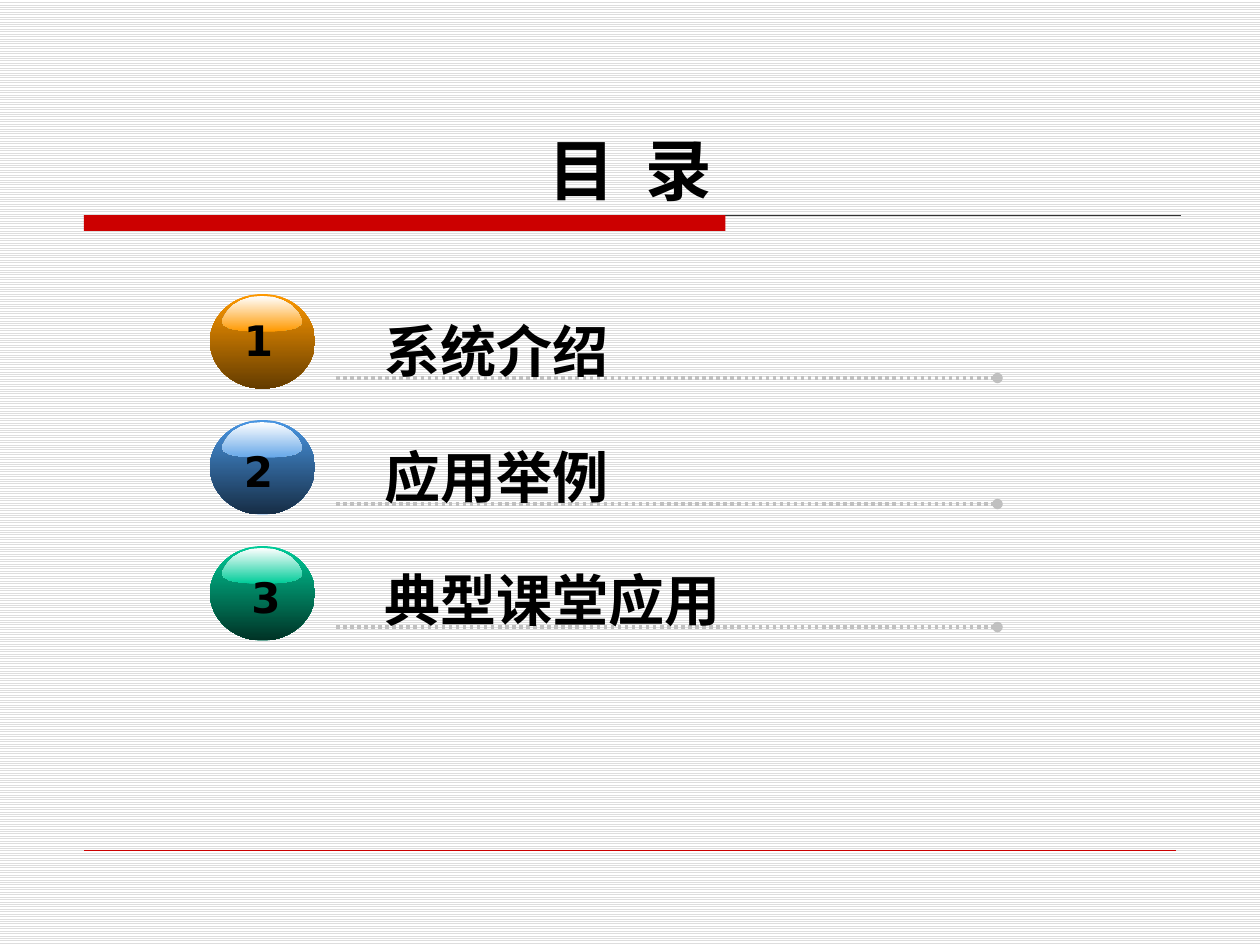
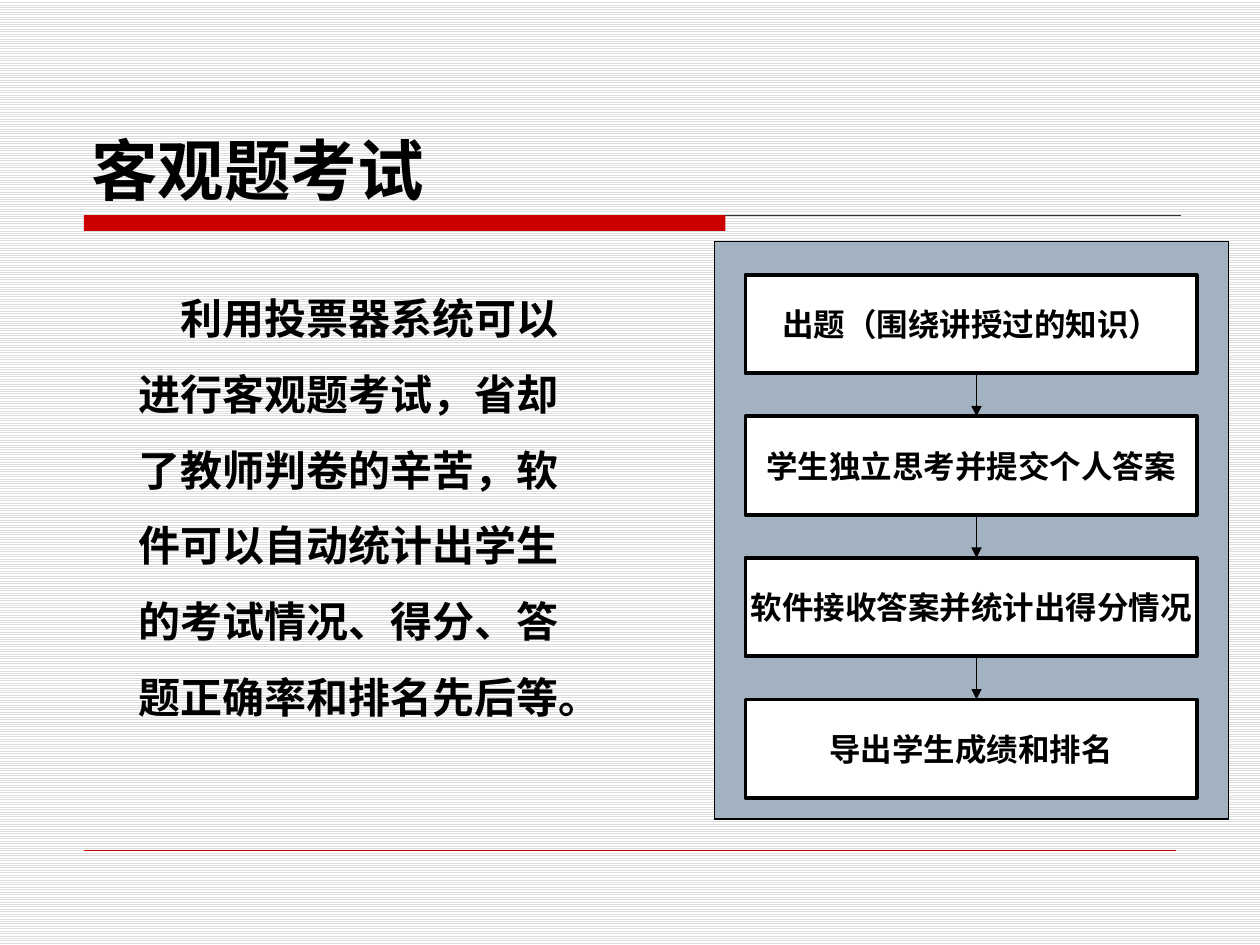
from dataclasses import dataclass
from typing import Any

from lxml import etree
from pptx import Presentation
from pptx.dml.color import RGBColor
from pptx.enum.dml import MSO_LINE, MSO_PATTERN
from pptx.enum.shapes import MSO_CONNECTOR, MSO_SHAPE as SHAPE
from pptx.enum.text import MSO_ANCHOR as ANCHOR, MSO_AUTO_SIZE as AUTO, PP_ALIGN as ALIGN
from pptx.oxml.ns import qn
from pptx.util import Pt

BLACK = RGBColor(0x00, 0x00, 0x00)
WHITE = RGBColor(0xFF, 0xFF, 0xFF)
STRIPE = RGBColor(0xDD, 0xDD, 0xDD)
RED = RGBColor(0xCC, 0x00, 0x00)
CHARCOAL = RGBColor(0x33, 0x33, 0x33)
SILVER = RGBColor(0xC0, 0xC0, 0xC0)
SLATE = RGBColor(0xA3, 0xB2, 0xC1)
ORANGE = RGBColor(0xFF, 0x99, 0x00)
BROWN = RGBColor(0x64, 0x3C, 0x00)
BLUE = RGBColor(0x49, 0x96, 0xE3)
SKY = RGBColor(0x66, 0xA7, 0xE8)
NAVY = RGBColor(0x16, 0x2D, 0x45)
GREEN = RGBColor(0x00, 0xCC, 0x99)
FOREST = RGBColor(0x00, 0x32, 0x25)

LATIN = "DejaVu Sans"
CJK = "Noto Sans CJK SC"
TITLE_ONLY, TITLE_AND_BODY = 5, 1

TITLE_FRAME = {"vertical_anchor": ANCHOR.BOTTOM, "auto_size": AUTO.NONE, "margin_bottom": 0}
PLAIN_FRAME = {"vertical_anchor": ANCHOR.TOP, "auto_size": AUTO.NONE, "word_wrap": True}
NODE_FRAME = {"vertical_anchor": ANCHOR.MIDDLE, "word_wrap": False}
NUMBER_FRAME = {"vertical_anchor": ANCHOR.TOP, "word_wrap": False}

GLOSS_HALF = [(0, 0), (6, 0.5), (12, 2.5), (17, 5.5), (20.5, 9.5), (23, 14),
              (22, 16.5), (18.5, 18.5), (13, 19.5), (6, 20.2)]


@dataclass(frozen=True)
class Box:
    """A rectangle in points."""
    left: float
    top: float
    width: float
    height: float

    def lengths(self) -> list[int]:
        """Return the four lengths for python-pptx."""
        return [Pt(v) for v in (self.left, self.top, self.width, self.height)]


@dataclass(frozen=True)
class Entry:
    """A numbered line of the contents."""
    text: str
    rule_y: float
    number_left: float
    number_top: float
    top_colour: RGBColor
    bottom_colour: RGBColor
    gloss_colour: RGBColor


ENTRIES = [
    Entry("系统介绍", 216, 131.8, 176.4, ORANGE, BROWN, ORANGE),
    Entry("应用举例", 288, 131.8, 251.3, BLUE, NAVY, SKY),
    Entry("典型课堂应用", 358.3, 136.1, 323.3, GREEN, FOREST, GREEN),
]
STEPS = ["出题（围绕讲授过的知识）", "学生独立思考并提交个人答案",
         "软件接收答案并统计出得分情况", "导出学生成绩和排名"]
EXAM_TEXT = ("利用投票器系统可以进行客观题考试，省却了教师判卷的辛苦，"
             "软件可以自动统计出学生的考试情况、得分、答题正确率和排名先后等。")


def apply(obj: Any, fmt: dict[str, Any]) -> None:
    """Set each format value on an object."""
    for name, value in fmt.items():
        setattr(obj, name, value)


def write(sp: Any, text: str, size: float, frame: dict[str, Any],
          para: dict[str, Any], latin: str = LATIN) -> Any:
    """Put one bold paragraph into a shape and return it."""
    tf = sp.text_frame
    apply(tf, frame)
    p = tf.paragraphs[0]
    apply(p, para)
    r = p.add_run()
    r.text = text
    apply(r.font, {"name": latin, "size": Pt(size), "bold": True})
    r.font.color.rgb = BLACK
    etree.SubElement(r.font._element, qn("a:ea"), typeface=CJK)
    return p


def place(sp: Any, box: Box) -> None:
    """Move and size a shape."""
    apply(sp, dict(zip(("left", "top", "width", "height"), box.lengths())))


def add_box(shapes: Any, box: Box, fill: RGBColor, line_width: float = 0) -> Any:
    """Add a flat rectangle, with a black outline if a width is given."""
    sp = shapes.add_shape(SHAPE.RECTANGLE, *box.lengths())
    sp.shadow.inherit = False
    sp.fill.solid()
    sp.fill.fore_color.rgb = fill
    if line_width:
        sp.line.color.rgb = BLACK
        sp.line.width = Pt(line_width)
    else:
        sp.line.fill.background()
    return sp


def add_line(shapes: Any, start: tuple[float, float], end: tuple[float, float],
             colour: RGBColor, width: float, tail: str = "", dash: Any = None) -> None:
    """Add a straight line with an optional dash and end mark."""
    sp = shapes.add_connector(MSO_CONNECTOR.STRAIGHT, *[Pt(v) for v in (*start, *end)])
    sp.line.color.rgb = colour
    sp.line.width = Pt(width)
    if dash:
        sp.line.dash_style = dash
    if tail:
        etree.SubElement(sp.line._get_or_add_ln(), qn("a:tailEnd"), type=tail)
    etree.SubElement(sp._element.spPr, qn("a:effectLst"))


def shade(sp: Any, top: RGBColor, bottom: RGBColor) -> None:
    """Fill a shape from top to bottom, without outline or shadow."""
    sp.shadow.inherit = False
    sp.line.fill.background()
    sp.fill.gradient()
    sp.fill.gradient_angle = 270
    for stop, colour, position in zip(sp.fill.gradient_stops, (top, bottom), (0, 1)):
        stop.color.rgb = colour
        stop.position = position


def add_sphere(shapes: Any, number: int, entry: Entry) -> None:
    """Draw a glossy numbered sphere."""
    top = 96 + 72 * number
    s = shapes.add_group_shape().shapes
    shade(s.add_shape(SHAPE.OVAL, *Box(120, top, 60, 54).lengths()),
          entry.top_colour, entry.bottom_colour)
    outline = GLOSS_HALF + [(-x, y) for x, y in reversed(GLOSS_HALF[1:])]
    points = [(Pt(149.8 + x), Pt(top + 1.2 + y)) for x, y in outline]
    builder = s.build_freeform(*points[0])
    builder.add_line_segments(points[1:], close=True)
    shade(builder.convert_to_shape(), WHITE, entry.gloss_colour)
    box = Box(entry.number_left, entry.number_top, 31.7, 36.7)
    write(s.add_textbox(*box.lengths()), str(number), 24, NUMBER_FRAME,
          {"alignment": ALIGN.CENTER})


def add_slide(prs: Any, layout: int, title: str, align: Any) -> Any:
    """Add a slide with the shared background, bands and title."""
    s = prs.slides.add_slide(prs.slide_layouts[layout])
    fill = s.background.fill
    fill.patterned()
    fill.pattern = MSO_PATTERN.LIGHT_HORIZONTAL
    fill.fore_color.rgb = STRIPE
    fill.back_color.rgb = WHITE
    add_line(s.shapes, (48, 123), (674.8, 123), CHARCOAL, 0.75)
    add_box(s.shapes, Box(48, 123, 366.5, 9), RED)
    add_line(s.shapes, (48, 486), (672, 486), RED, 0.25)
    place(s.shapes.title, Box(45, 23.8, 630, 95.8))
    write(s.shapes.title, title, 38, TITLE_FRAME, {"alignment": align})
    return s


def build_contents(prs: Any) -> None:
    """Build the contents slide."""
    shapes = add_slide(prs, TITLE_ONLY, "目  录", ALIGN.CENTER).shapes
    for number, entry in enumerate(ENTRIES, 1):
        y = entry.rule_y
        add_line(shapes, (192, y), (570, y), SILVER, 2, "oval", MSO_LINE.ROUND_DOT)
        label = shapes.add_textbox(*Box(212.4, y - 41.8, 380, 46).lengths())
        write(label, entry.text, 32, PLAIN_FRAME, {"line_spacing": Pt(41.4)}, CJK)
        add_sphere(shapes, number, entry)


def build_exam(prs: Any) -> None:
    """Build the slide on objective tests with its flow of steps."""
    s = add_slide(prs, TITLE_AND_BODY, "客观题考试", ALIGN.LEFT)
    body = s.placeholders[1]
    place(body, Box(72, 149, 264.2, 312.5))
    p = write(body, EXAM_TEXT, 24, PLAIN_FRAME,
              {"alignment": ALIGN.LEFT, "line_spacing": Pt(43.3), "space_before": Pt(2)})
    ppr = p._p.get_or_add_pPr()
    ppr.set("marL", "0")
    ppr.set("indent", str(Pt(24)))
    etree.SubElement(ppr, qn("a:buNone"))

    shapes = s.shapes.add_group_shape().shapes
    add_box(shapes, Box(408.2, 138.2, 293.8, 329.8), SLATE, 0.75)
    top, height, pitch = 157, 56.2, 80.9
    for i, step in enumerate(STEPS):
        y = top + i * pitch
        node = add_box(shapes, Box(426, y, 257.8, height), WHITE, 2.25)
        write(node, step, 18, NODE_FRAME, {"alignment": ALIGN.CENTER})
        if i:
            add_line(shapes, (558, y - pitch + height), (558, y), BLACK, 0.75, "triangle")


def main() -> None:
    """Build and save the presentation."""
    prs = Presentation()
    prs.slide_width, prs.slide_height = Pt(720), Pt(540)
    build_contents(prs)
    build_exam(prs)
    prs.save("out.pptx")


if __name__ == "__main__":
    main()
